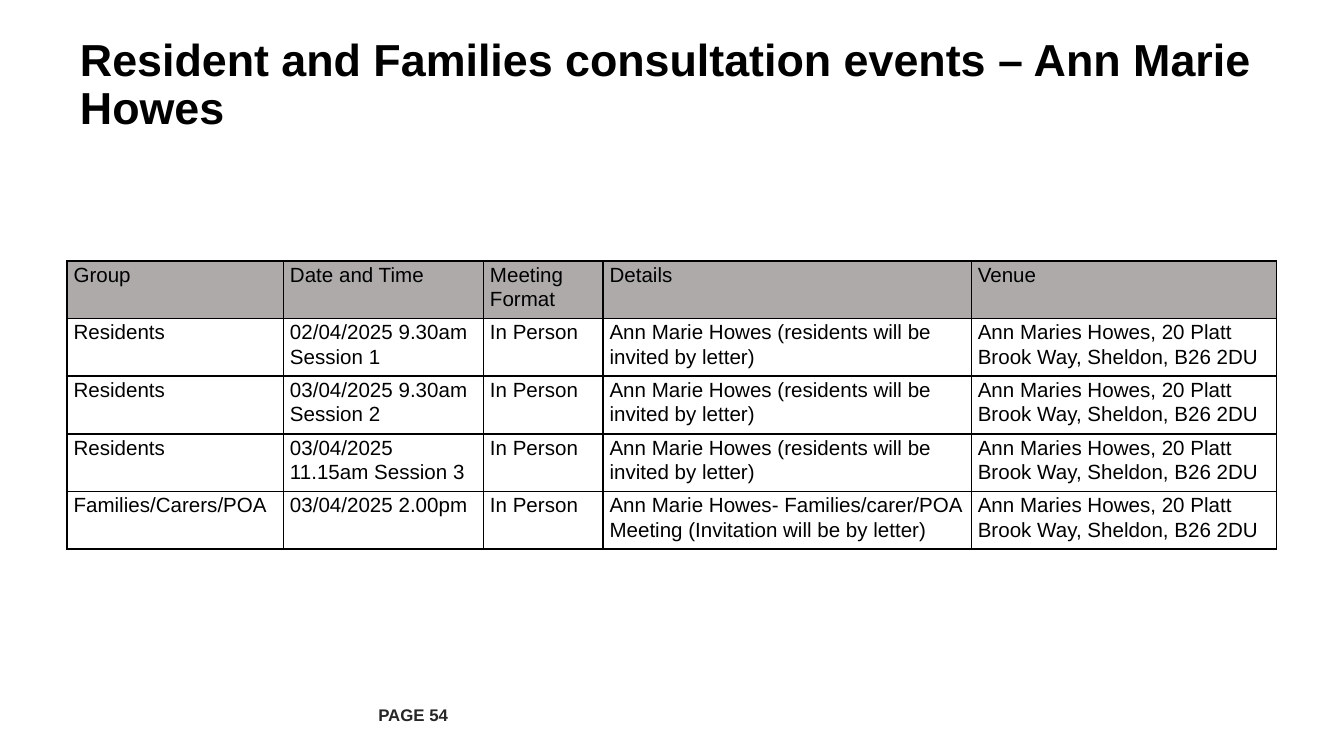
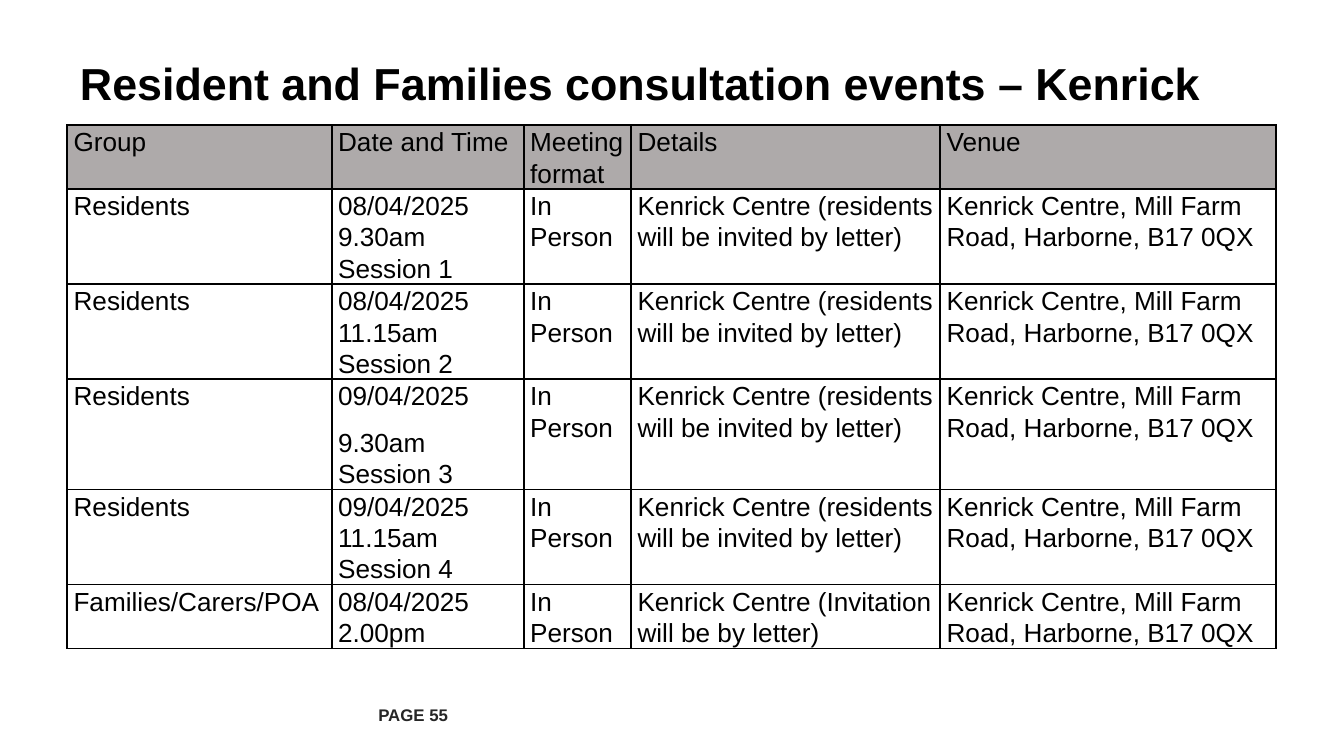
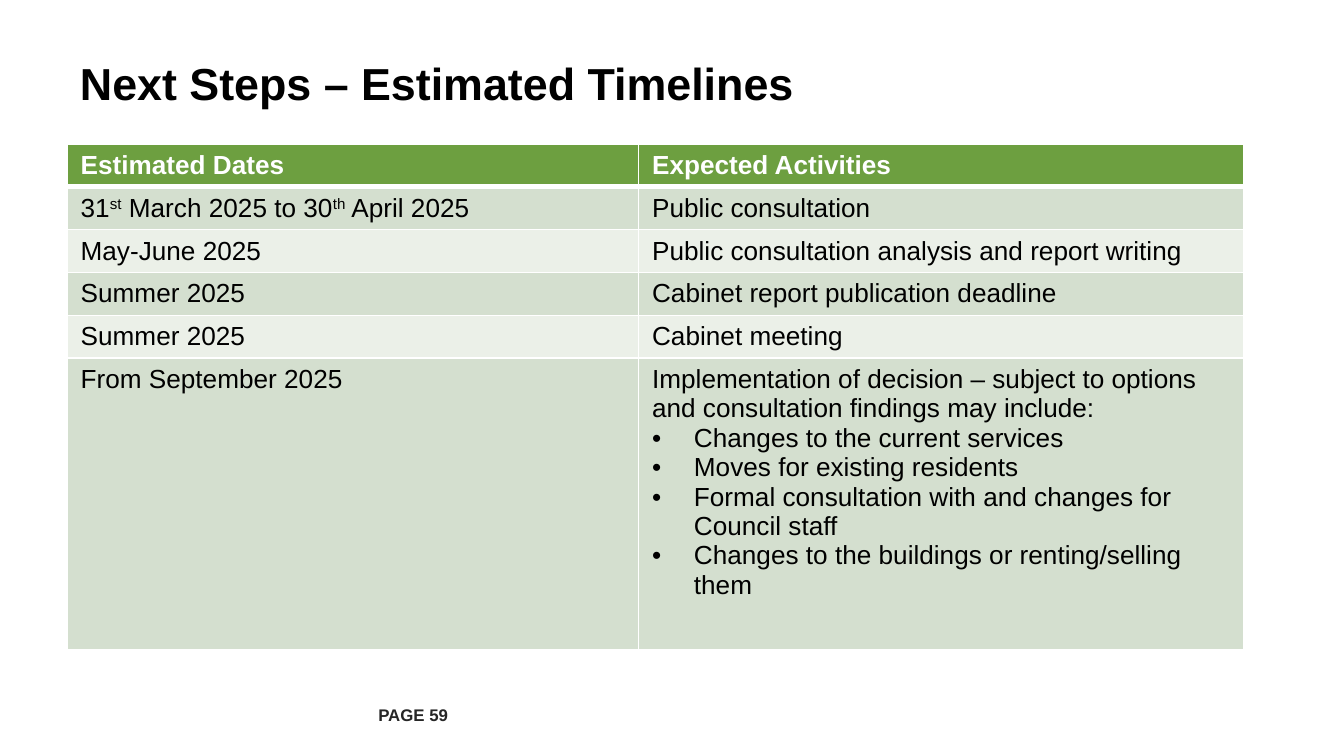
from lxml import etree
from pptx import Presentation
from pptx.dml.color import RGBColor
from pptx.enum.text import MSO_ANCHOR, MSO_AUTO_SIZE, PP_ALIGN
from pptx.oxml.ns import qn
from pptx.util import Cm, Pt

MIDDLE = MSO_ANCHOR.MIDDLE
LEFT = PP_ALIGN.LEFT
NO_AUTOFIT = MSO_AUTO_SIZE.NONE
TITLE_ONLY = 5
FONT = "Arial"
COLOURS = {
    "text": "000000",
    "footer": "262626",
    "white": "FFFFFF",
    "grey header": "AEAAAA",
    "green header": "6D9F40",
    "dark band": "D4DFCF",
    "light band": "EBF0E8",
}
MARGIN = 1.27
BULLET = "•"
SUPERSCRIPT_MARK = "^"


def colour(name):
    return RGBColor.from_string(COLOURS[name])


def add_run(paragraph, text, size, colour_name, bold=False, superscript=False):
    run = paragraph.add_run()
    run.text = text
    run.font.name = FONT
    run.font.size = Pt(size)
    run.font.bold = bold
    run.font.color.rgb = colour(colour_name)
    if superscript:
        run._r.get_or_add_rPr().set("baseline", "30000")


def format_frame(frame):
    frame.word_wrap = True
    frame.auto_size = NO_AUTOFIT
    frame.vertical_anchor = MIDDLE
    frame.margin_left = frame.margin_right = Cm(0.24)
    frame.margin_top = frame.margin_bottom = Cm(0.11)


def add_slide(presentation, title, page):
    slide = presentation.slides.add_slide(presentation.slide_layouts[TITLE_ONLY])
    shape = slide.shapes.title
    shape.left, shape.top = Cm(MARGIN), Cm(0.58)
    shape.width, shape.height = Cm(22.86), Cm(2.08)
    format_frame(shape.text_frame)
    paragraph = shape.text_frame.paragraphs[0]
    paragraph.alignment = LEFT
    paragraph.line_spacing = 0.9
    add_run(paragraph, title, 24, "text", bold=True)

    footer = slide.shapes.add_textbox(Cm(6.91), Cm(13.13), Cm(2.21), Cm(0.76))
    format_frame(footer.text_frame)
    add_run(footer.text_frame.paragraphs[0], f"PAGE {page}", 9, "footer", bold=True)
    return slide


def set_borders(cell, colour_name, top=1, bottom=1):
    properties = cell._tc.get_or_add_tcPr()
    for side, width in (("L", 1), ("R", 1), ("T", top), ("B", bottom)):
        line = etree.SubElement(properties, qn(f"a:ln{side}"), w=str(Pt(width)))
        fill = etree.SubElement(line, qn("a:solidFill"))
        etree.SubElement(fill, qn("a:srgbClr"), val=COLOURS[colour_name])


def set_fill(cell, colour_name):
    if colour_name is None:
        cell.fill.background()
        return
    cell.fill.solid()
    cell.fill.fore_color.rgb = colour(colour_name)


def add_bullet(paragraph):
    properties = paragraph._p.get_or_add_pPr()
    properties.set("marL", str(Cm(0.79)))
    properties.set("indent", str(-Cm(0.79)))
    etree.SubElement(properties, qn("a:buFont"), typeface=FONT)
    etree.SubElement(properties, qn("a:buChar"), char=BULLET)


def write_cell(cell, content, size, colour_name="text", bold=False):
    lines = [content] if isinstance(content, str) else content
    frame = cell.text_frame
    for index, line in enumerate(lines):
        paragraph = frame.add_paragraph() if index else frame.paragraphs[0]
        if line.startswith(BULLET):
            add_bullet(paragraph)
            line = line.removeprefix(BULLET).lstrip()
        for position, text in enumerate(line.split(SUPERSCRIPT_MARK)):
            add_run(paragraph, text, size, colour_name, bold, position % 2 == 1)


def add_table(slide, top, widths, heights):
    frame = slide.shapes.add_table(
        len(heights), len(widths), Cm(MARGIN), Cm(top), Cm(sum(widths)), Cm(sum(heights))
    )
    table = frame.table
    table.first_row = table.horz_banding = False
    for column, width in zip(table.columns, widths):
        column.width = Cm(width)
    for row, height in zip(table.rows, heights):
        row.height = Cm(height)
    return table


def add_events_table(slide, top, widths, heights, rows, size):
    table = add_table(slide, top, widths, heights)
    for row_index, row in enumerate(rows):
        for column_index, content in enumerate(row):
            cell = table.cell(row_index, column_index)
            set_borders(cell, "text")
            set_fill(cell, None if row_index else "grey header")
            cell.margin_left = cell.margin_right = Cm(0.12)
            cell.margin_top, cell.margin_bottom = Cm(0.02), 0
            write_cell(cell, content, size)
            for paragraph in cell.text_frame.paragraphs:
                paragraph.line_spacing = 1.07
                paragraph.space_after = Pt(8)


def add_timeline_table(slide, top, widths, heights, rows):
    table = add_table(slide, top, widths, heights)
    for row_index, row in enumerate(rows):
        is_header = row_index == 0
        band = "dark band" if row_index % 2 else "light band"
        for column_index, content in enumerate(row):
            cell = table.cell(row_index, column_index)
            set_borders(
                cell, "white", top=3 if row_index == 1 else 1, bottom=3 if is_header else 1
            )
            set_fill(cell, "green header" if is_header else band)
            write_cell(cell, content, 14, "white" if is_header else "text", is_header)


def event_rows(format_heading, resident_dates, resident_details, family_date, family_details, venue):
    header = ("Group", "Date and Time", format_heading, "Details", "Venue")
    residents = [
        ("Residents", date, "In Person", resident_details, venue) for date in resident_dates
    ]
    families = ("Families/Carers/POA", family_date, "In Person", family_details, venue)
    return [header, *residents, families]


def main():
    presentation = Presentation()
    presentation.slide_width, presentation.slide_height = Cm(25.4), Cm(14.29)

    slide = add_slide(
        presentation, "Resident and Families consultation events – Ann Marie Howes", 54
    )
    howes_rows = event_rows(
        "Meeting Format",
        [
            "02/04/2025 9.30am Session 1",
            "03/04/2025 9.30am Session 2",
            "03/04/2025 11.15am Session 3",
        ],
        "Ann Marie Howes (residents will be invited by letter)",
        "03/04/2025 2.00pm",
        "Ann Marie Howes- Families/carer/POA Meeting (Invitation will be by letter)",
        "Ann Maries Howes, 20 Platt Brook Way, Sheldon, B26 2DU",
    )
    add_events_table(slide, 4.93, [4.09, 3.78, 2.26, 6.96, 5.77], [1.09] * 5, howes_rows, 11)

    slide = add_slide(presentation, "Resident and Families consultation events – Kenrick", 55)
    kenrick_rows = event_rows(
        "Meeting format",
        [
            "08/04/2025 9.30am Session 1",
            "08/04/2025 11.15am Session 2",
            ["09/04/2025", "9.30am Session 3"],
            "09/04/2025 11.15am Session 4",
        ],
        "Kenrick Centre (residents will be invited by letter)",
        "08/04/2025 2.00pm",
        "Kenrick Centre (Invitation will be by letter)",
        "Kenrick Centre, Mill Farm Road, Harborne, B17 0QX",
    )
    kenrick_heights = [1.17] * 3 + [1.5] + [1.17] * 2
    add_events_table(
        slide, 2.36, [5, 3.63, 2.03, 5.84, 6.35], kenrick_heights, kenrick_rows, 14
    )

    slide = add_slide(presentation, "Next Steps – Estimated Timelines", 59)
    timeline_rows = [
        ("Estimated Dates", "Expected Activities"),
        ("31^st^ March 2025 to 30^th^ April 2025", "Public consultation"),
        ("May-June 2025", "Public consultation analysis and report writing"),
        ("Summer 2025", "Cabinet report publication deadline"),
        ("Summer 2025", "Cabinet meeting"),
        (
            "From September 2025",
            [
                "Implementation of decision – subject to options and consultation "
                "findings may include:",
                "• Changes to the current services",
                "• Moves for existing residents",
                "• Formal consultation with and changes for Council staff",
                "• Changes to the buildings or renting/selling them",
            ],
        ),
    ]
    add_timeline_table(slide, 2.72, [10.8, 11.43], [0.81] * 5 + [5.51], timeline_rows)

    presentation.save("out.pptx")


if __name__ == "__main__":
    main()
